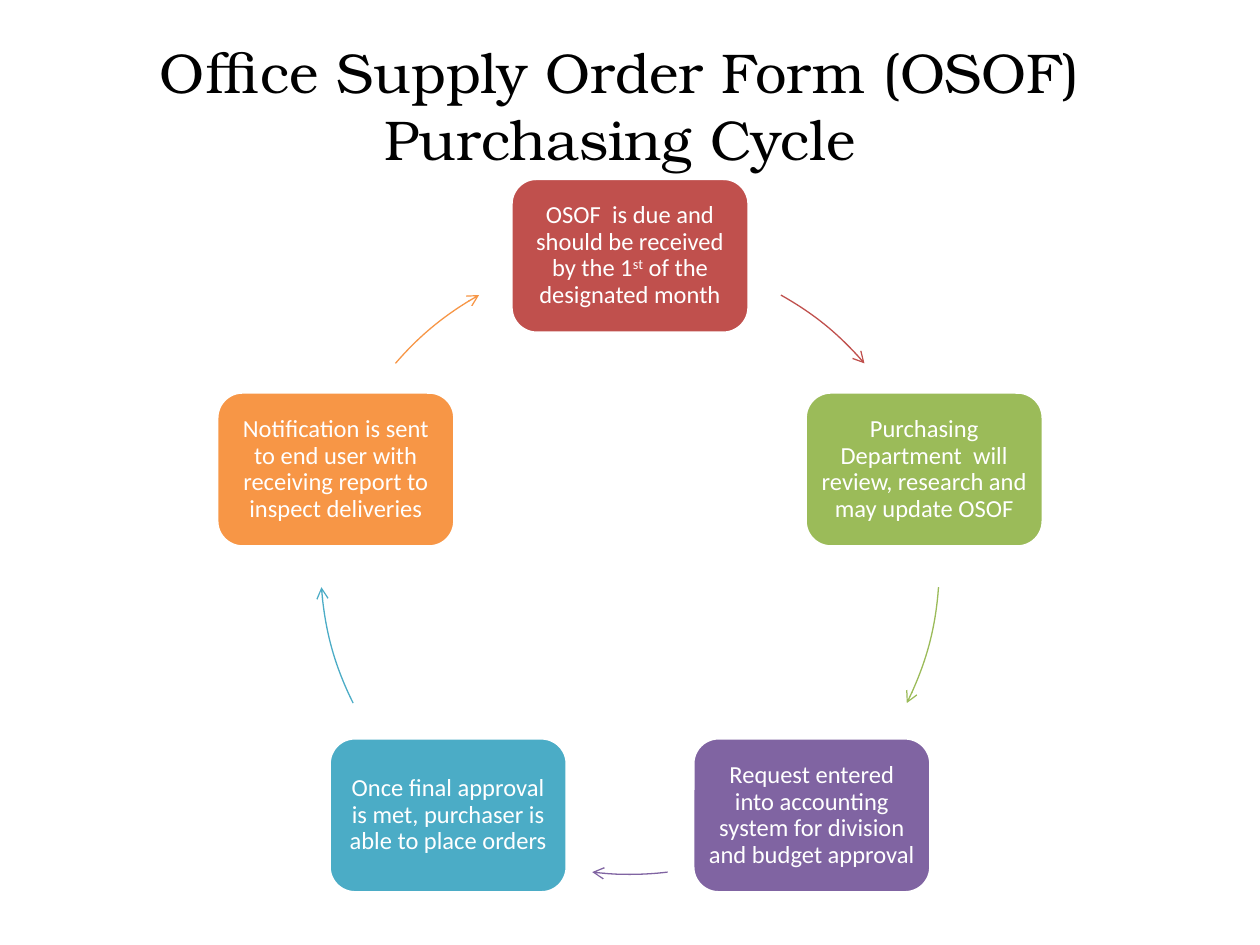
import math

import pptx
import pptx.dml.color
import pptx.enum.shapes
import pptx.enum.text
import pptx.oxml.ns
import pptx.util
from lxml import etree

SHAPE = pptx.enum.shapes.MSO_SHAPE
CENTER = pptx.enum.text.PP_ALIGN.CENTER
MIDDLE = pptx.enum.text.MSO_ANCHOR.MIDDLE
inch = pptx.util.Inches
pt = pptx.util.Pt

W, H = 10, 7.5
STEP_W, STEP_H = 1.89, 1.23
INSET = 0.06

# Each step: runs of (text, is superscript), and its colour
STEPS = [
    ([("OSOF  is due and should be received by the 1", False), ("st", True),
      (" of the designated month", False)], "C0504D"),
    ([("Purchasing Department  will review, research and may update OSOF", False)], "9BBB59"),
    ([("Request entered into accounting system for division and budget approval", False)], "8064A2"),
    ([("Once final approval is met, purchaser is able to place orders", False)], "4BACC6"),
    ([("Notification is sent to end user with receiving report to inspect deliveries", False)], "F79646"),
]
# Start and end of each arrow, in degrees clockwise from the top
ARROWS = [(29.2, 49.3), (94.1, 116.5), (173, 187), (243.5, 265.9), (310.7, 330.8)]


def rgb(value):
    return pptx.dml.color.RGBColor.from_string(value)


def style_run(r, font, size, color):
    r.font.name = font
    r.font.size = pt(size)
    r.font.color.rgb = rgb(color)


def add_title(slide, box, lines):
    sp = slide.shapes.add_textbox(*map(inch, box))
    sp.fill.solid()
    sp.fill.fore_color.rgb = rgb("FFFFFF")
    tf = sp.text_frame
    tf.word_wrap = True
    tf.text = "\n".join(lines)
    for p in tf.paragraphs:
        p.alignment = CENTER
        style_run(p.runs[0], "TeX Gyre Bonum", 32, "000000")


def add_step(slide, box, parts, color):
    sp = slide.shapes.add_shape(SHAPE.ROUNDED_RECTANGLE, *map(inch, box))
    sp.shadow.inherit = False
    sp.fill.solid()
    sp.fill.fore_color.rgb = rgb(color)
    sp.line.color.rgb = rgb("FFFFFF")
    sp.line.width = pt(2)
    tf = sp.text_frame
    tf.word_wrap = True
    tf.vertical_anchor = MIDDLE
    tf.margin_left = tf.margin_right = tf.margin_top = tf.margin_bottom = inch(INSET)
    p = tf.paragraphs[0]
    p.alignment = CENTER
    p.line_spacing = 0.9
    for text, superscript in parts:
        r = p.add_run()
        r.text = text
        style_run(r, "Calibri", 14, "FFFFFF")
        if superscript:
            r._r.get_or_add_rPr().set("baseline", "30000")


def add_arc_arrow(slide, box, angles, color):
    sp = slide.shapes.add_shape(SHAPE.ARC, *map(inch, box))
    sp.shadow.inherit = False
    sp.fill.background()
    # Arc angles run clockwise from the right, in 60000ths of a degree
    for i, angle in enumerate(angles):
        sp.adjustments[i] = (angle - 90) % 360 * 0.6
    sp.line.color.rgb = rgb(color)
    sp.line.width = pt(0.75)
    etree.SubElement(sp.line._get_or_add_ln(), pptx.oxml.ns.qn("a:tailEnd"), type="arrow")


def add_cycle(slide, box):
    """Place the steps evenly on the circle in the box, clockwise from the top."""
    left, top, width, height = box
    for i, (parts, color) in enumerate(STEPS):
        turn = 2 * math.pi * i / len(STEPS)
        x = left + width / 2 * (1 + math.sin(turn))
        y = top + height / 2 * (1 - math.cos(turn))
        add_step(slide, (x - STEP_W / 2, y - STEP_H / 2, STEP_W, STEP_H), parts, color)
        add_arc_arrow(slide, box, ARROWS[i], color)


def main():
    prs = pptx.Presentation()
    prs.slide_width, prs.slide_height = inch(W), inch(H)
    slide = prs.slides.add_slide(prs.slide_layouts[6])
    diameter = 4.91
    add_cycle(slide, ((W - diameter) / 2, 2.03, diameter, diameter))
    add_title(slide, (0.92, 0.25, 0.8 * W, 1.18),
              ["Office Supply Order Form (OSOF)", "Purchasing Cycle"])
    prs.save("out.pptx")


if __name__ == "__main__":
    main()
